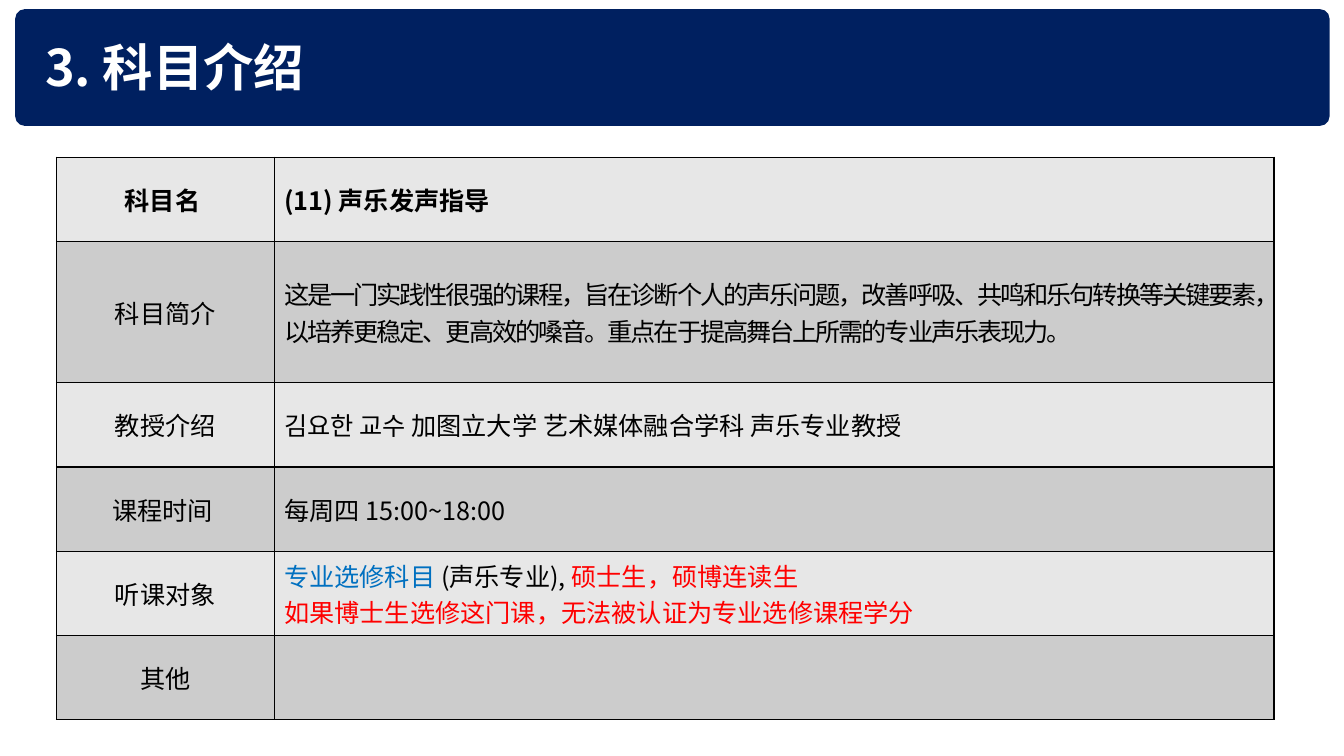
from lxml import etree
from pptx import Presentation
from pptx.dml.color import RGBColor
from pptx.enum.shapes import MSO_SHAPE
from pptx.enum.text import MSO_ANCHOR, PP_ALIGN
from pptx.oxml.ns import qn
from pptx.util import Pt

ROUNDED = MSO_SHAPE.ROUNDED_RECTANGLE
MIDDLE = MSO_ANCHOR.MIDDLE
LEFT, CENTER = PP_ALIGN.LEFT, PP_ALIGN.CENTER

COLORS = {
    "navy": "002060", "white": "FFFFFF", "black": "000000", "blue": "0070C0",
    "red": "FF0000", "light": "E7E7E7", "dark": "CCCCCC",
}
COLUMN_WIDTHS = [155.5, 714.2]
ROW_HEIGHT, INTRODUCTION_HEIGHT = 60.2, 100.9

# Each row: label, paragraphs of (text, format) runs, and row format.
COURSE_ROWS = [
    ("科目名 ", [[("(11) 声乐发声指导", {})]], {"bold": True}),
    ("科目简介", [[("这是一门实践性很强的课程，旨在诊断个人的声乐问题，改善呼吸、共鸣和乐句转换等关键要素，"
                "以培养更稳定、更高效的嗓音。重点在于提高舞台上所需的专业声乐表现力。",
                {"spacing": -1.5})]], {}),
    ("教授介绍", [[("김요한 교수 加图立大学 艺术媒体融合学科 声乐专业教授", {})]], {}),
    ("课程时间 ", [[("每周四 15:00~18:00", {})]], {}),
    ("听课对象", [
        [("专业选修科目 ", {"color": "blue"}), ("(声乐专业), ", {}),
         ("硕士生，硕博连读生", {"color": "red"})],
        [("如果博士生选修这门课，无法被认证为专业选修课程学分", {"color": "red"})],
    ], {}),
    ("其他", [], {}),
]


def add_run(paragraph, text, size=18, color="black", bold=False, spacing=0,
            font="Noto Sans CJK KR"):
    run = paragraph.add_run()
    run.text = text
    run.font.size = Pt(size)
    run.font.bold = bold
    run.font.name = font
    run.font.color.rgb = RGBColor.from_string(COLORS[color])
    properties = run.font._element
    etree.SubElement(properties, qn("a:ea"), typeface=font)
    if spacing:
        properties.set("spc", str(round(spacing * 100)))


class SlideBuilder:
    def __init__(self, slide):
        self.slide = slide
        self.border_color = COLORS["black"]
        self.border_width = Pt(1)

    def bar(self, left, top, width, height, color, rounding):
        shape = self.slide.shapes.add_shape(
            ROUNDED, Pt(left), Pt(top), Pt(width), Pt(height))
        shape.adjustments[0] = rounding
        shape.shadow.inherit = False
        shape.fill.solid()
        shape.fill.fore_color.rgb = RGBColor.from_string(COLORS[color])
        shape.line.fill.background()

    def text(self, left, top, width, height, text, **style):
        box = self.slide.shapes.add_textbox(Pt(left), Pt(top), Pt(width), Pt(height))
        box.text_frame.word_wrap = True
        add_run(box.text_frame.paragraphs[0], text, **style)

    def cell(self, cell, paragraphs, fill, alignment, **style):
        cell.vertical_anchor = MIDDLE
        for index, runs in enumerate(paragraphs):
            frame = cell.text_frame
            paragraph = frame.add_paragraph() if index else frame.paragraphs[0]
            paragraph.alignment = alignment
            for text, run_style in runs:
                add_run(paragraph, text, **style, **run_style)
        self.borders(cell)
        cell.fill.solid()
        cell.fill.fore_color.rgb = RGBColor.from_string(COLORS[fill])

    def borders(self, cell):
        properties = cell._tc.get_or_add_tcPr()
        for side in ("lnL", "lnR", "lnT", "lnB"):
            line = etree.SubElement(properties, qn("a:" + side), w=str(self.border_width))
            solid = etree.SubElement(line, qn("a:solidFill"))
            etree.SubElement(solid, qn("a:srgbClr"), val=self.border_color)

    def table(self, left, top, widths, heights, rows):
        table = self.slide.shapes.add_table(
            len(rows), len(widths), Pt(left), Pt(top),
            Pt(sum(widths)), Pt(sum(heights))).table
        for column, width in zip(table.columns, widths):
            column.width = Pt(width)
        for index, (label, paragraphs, style) in enumerate(rows):
            table.rows[index].height = Pt(heights[index])
            fill = "dark" if index % 2 else "light"
            self.cell(table.cell(index, 0), [[(label, {})]], fill, CENTER, **style)
            self.cell(table.cell(index, 1), paragraphs, fill, LEFT, **style)


def main():
    presentation = Presentation()
    presentation.slide_width, presentation.slide_height = Pt(960), Pt(540)
    builder = SlideBuilder(presentation.slides.add_slide(presentation.slide_layouts[6]))
    builder.bar(10.8, 6.5, 939, 83.5, "navy", rounding=0.085)
    builder.text(25.2, 22.3, 844.6, 51, "3. 科目介绍", size=36, color="white", bold=True)
    heights = [ROW_HEIGHT] * len(COURSE_ROWS)
    heights[1] = INTRODUCTION_HEIGHT
    builder.table(40.3, 112.3, COLUMN_WIDTHS, heights, COURSE_ROWS)
    presentation.save("out.pptx")


if __name__ == "__main__":
    main()
